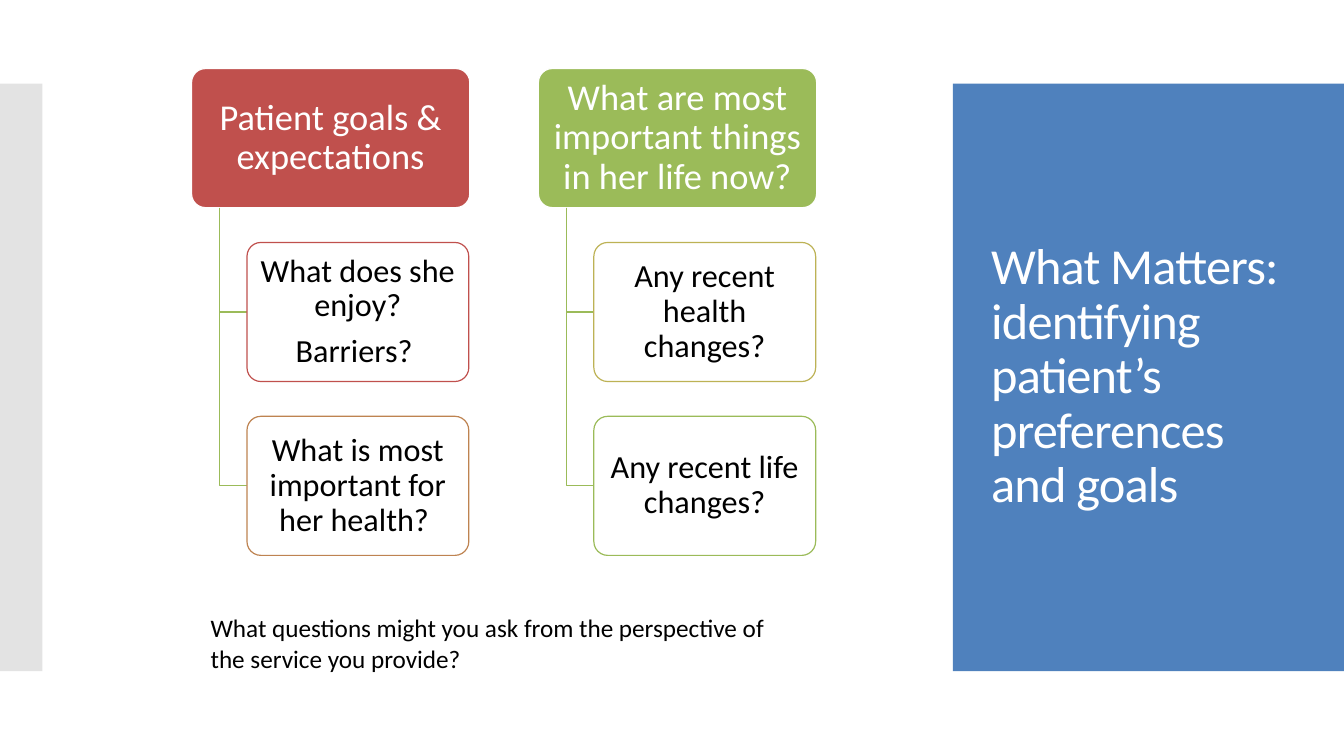
from pptx import Presentation
from pptx.dml.color import RGBColor
from pptx.enum.shapes import MSO_SHAPE
from pptx.enum.text import MSO_ANCHOR, PP_ALIGN
from pptx.util import Inches, Pt

RECT = MSO_SHAPE.RECTANGLE
ROUNDED = MSO_SHAPE.ROUNDED_RECTANGLE
MIDDLE = MSO_ANCHOR.MIDDLE
LEFT, CENTER = PP_ALIGN.LEFT, PP_ALIGN.CENTER

WHITE, BLACK, GREEN = "FFFFFF", "000000", "9BBB59"
CARD_TOP, CARD_HEIGHT, ROW_STEP = 0.68, 1.38, 1.725
HEADING_WIDTH, CARD_WIDTH, INDENT = 2.76, 2.2, 0.55


def paint(shape, fill, line=None):
    shape.shadow.inherit = False
    if fill:
        shape.fill.solid()
        shape.fill.fore_color.rgb = RGBColor.from_string(fill)
    else:
        shape.fill.background()
    if line:
        shape.line.color.rgb = RGBColor.from_string(line)
        shape.line.width = Pt(0.85)
    else:
        shape.line.fill.background()


def write(shape, text, size, color, align=LEFT, spacing=1.0, after=0):
    frame = shape.text_frame
    frame.text = text
    frame.word_wrap = True
    for paragraph in frame.paragraphs:
        paragraph.alignment = align
        paragraph.line_spacing = spacing
        paragraph.space_after = Pt(after)
        for run in paragraph.runs:
            run.font.name = "Calibri"
            run.font.size = Pt(size)
            run.font.color.rgb = RGBColor.from_string(color)


prs = Presentation()
prs.slide_width = Inches(13.33)
prs.slide_height = Inches(7.5)
slide = prs.slides.add_slide(prs.slide_layouts[5])
shapes = slide.shapes

for left, width, color in [(9.45, 3.88, "4F81BD"), (0, 0.42, "E3E3E3")]:
    panel = shapes.add_shape(RECT, Inches(left), Inches(0.83), Inches(width), Inches(5.83))
    paint(panel, color)

title = shapes.title
title.left, title.top = Inches(9.73), Inches(1.23)
title.width, title.height = Inches(3.22), Inches(5.03)
write(title, "What Matters: identifying patient’s preferences and goals", 36, WHITE, spacing=0.9)
title.text_frame.vertical_anchor = MIDDLE
title.text_frame.paragraphs[0].runs[0].font._element.set("spc", "-60")
shapes._spTree.append(title._element)

branches = [
    (1.9, "C0504D", "Patient goals & expectations", [
        ("What does she enjoy?\nBarriers? ", "C0504D"),
        ("What is most important for her health? ", "BE8351"),
    ]),
    (5.34, GREEN, "What are most important things in her life now?", [
        ("Any recent health changes?", "BDB255"),
        ("Any recent life changes?", GREEN),
    ]),
]

for left, color, heading, questions in branches:
    cards = [(left, HEADING_WIDTH, heading, 26, WHITE, color, WHITE)]
    for question, outline in questions:
        cards.append((left + INDENT, CARD_WIDTH, question, 23, BLACK, WHITE, outline))

    for row, (x, width, text, size, ink, fill, outline) in enumerate(cards):
        top = CARD_TOP + row * ROW_STEP
        if row:
            trunk, middle = left + INDENT / 2, top + CARD_HEIGHT / 2
            builder = shapes.build_freeform(Inches(trunk), Inches(CARD_TOP + CARD_HEIGHT))
            builder.add_line_segments(
                [(Inches(trunk), Inches(middle)), (Inches(x), Inches(middle))], close=False)
            paint(builder.convert_to_shape(), None, GREEN)
        card = shapes.add_shape(ROUNDED, Inches(x), Inches(top), Inches(width), Inches(CARD_HEIGHT))
        card.adjustments[0] = 0.1
        paint(card, fill, outline)
        write(card, text, size, ink, CENTER, 0.9, size * 0.35)
        frame = card.text_frame
        frame.vertical_anchor = MIDDLE
        frame.margin_left = frame.margin_right = Inches(0.09)
        frame.margin_top = frame.margin_bottom = Inches(0.07)

prompt = shapes.add_textbox(Inches(1.99), Inches(6.03), Inches(6.05), Inches(0.71))
write(prompt, "What questions might you ask from the perspective of the service you provide?", 18, BLACK)

prs.save("out.pptx")
